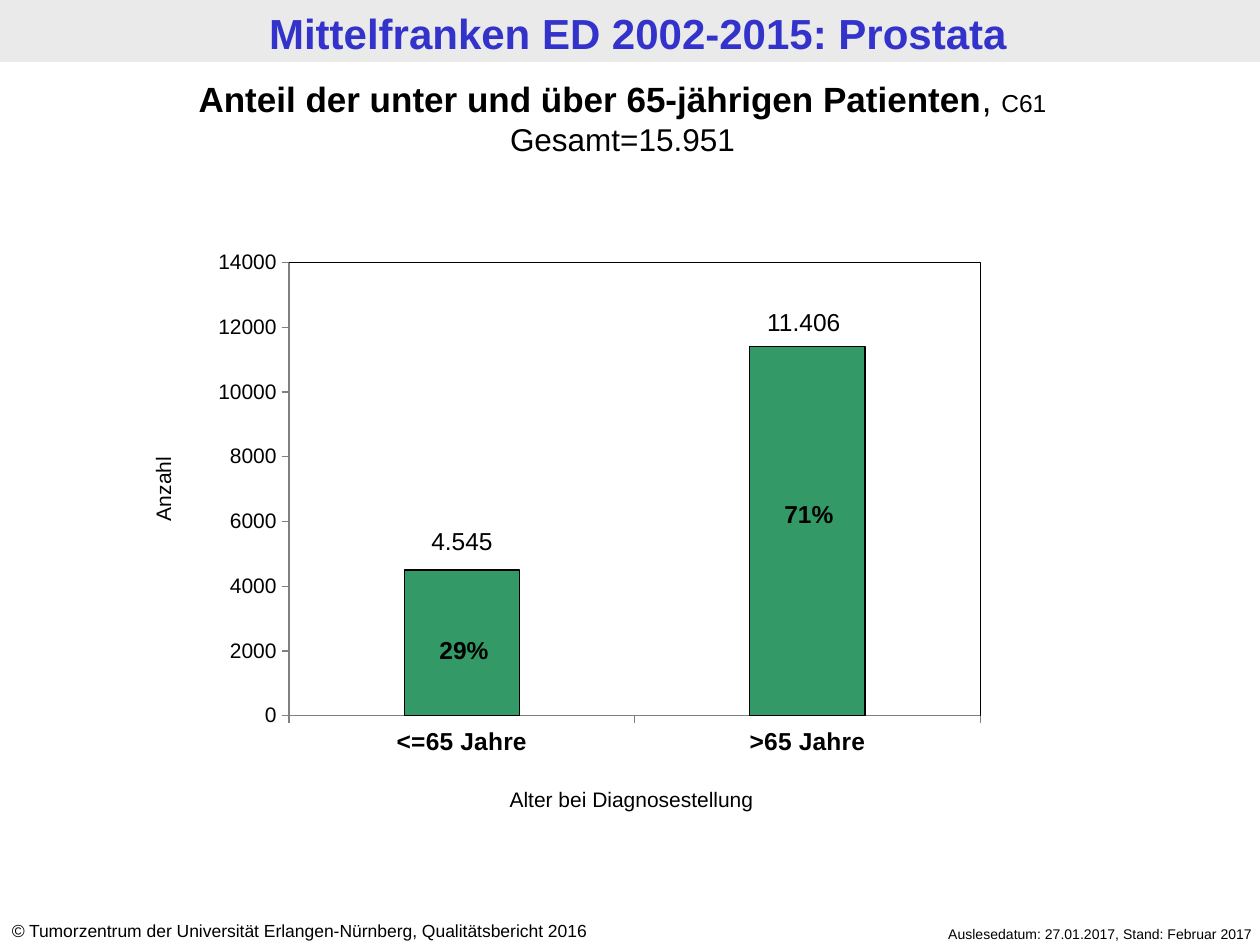
"""Build the slide on the age split of prostate patients."""
from dataclasses import dataclass

from lxml.etree import SubElement
from pptx import Presentation
from pptx.chart.data import CategoryChartData
from pptx.dml.color import RGBColor
from pptx.enum.chart import XL_CHART_TYPE, XL_TICK_MARK
from pptx.enum.shapes import MSO_SHAPE
from pptx.enum.text import MSO_ANCHOR, MSO_AUTO_SIZE, PP_ALIGN
from pptx.oxml import parse_xml
from pptx.oxml.ns import nsdecls, qn
from pptx.util import Pt


@dataclass(frozen=True)
class Theme:
    """Colours, fonts and type sizes."""
    text: RGBColor = RGBColor(0, 0, 0)
    title: RGBColor = RGBColor.from_string("3333CC")
    band: RGBColor = RGBColor.from_string("EAEAEA")
    bar: RGBColor = RGBColor.from_string("339966")
    axis: RGBColor = RGBColor.from_string("808080")
    font: str = "Arial"
    chart_font: str = "Calibri"
    title_size: int = 24
    heading_size: int = 20
    chart_size: int = 18
    label_size: int = 14
    axis_size: int = 12
    source_size: int = 10
    date_size: int = 8


class SlideBuilder:
    """Draw styled elements on one slide."""

    def __init__(self, page, theme):
        self.page = page
        self.theme = theme

    def style(self, font, size, bold=False, color=None):
        """Apply the theme typeface to a font."""
        font.name = self.theme.font
        font.size = Pt(size)
        font.bold = bold
        font.color.rgb = color or self.theme.text

    def band(self, width, height):
        """Put the header band behind everything else."""
        band = self.page.shapes.add_shape(MSO_SHAPE.RECTANGLE, 0, 0, Pt(width), Pt(height))
        band.shadow.inherit = False
        band.fill.solid()
        band.fill.fore_color.rgb = self.theme.band
        band.line.fill.background()
        self.page.shapes._spTree.insert(2, band._element)

    def title(self, words, left, top, width, height):
        """Fill and place the title placeholder."""
        box = self.page.shapes.title
        box.left, box.top, box.width, box.height = map(Pt, (left, top, width, height))
        frame = box.text_frame
        frame.text = words
        frame.auto_size = MSO_AUTO_SIZE.NONE
        frame.vertical_anchor = MSO_ANCHOR.TOP
        para = frame.paragraphs[0]
        para.alignment = PP_ALIGN.CENTER
        self.style(para.font, self.theme.title_size, True, self.theme.title)

    def text(self, words, left, top, width, height, size, bold=False,
             align=PP_ALIGN.CENTER, rotation=0):
        """Add a one-paragraph text box and return its frame."""
        box = self.page.shapes.add_textbox(Pt(left), Pt(top), Pt(width), Pt(height))
        box.rotation = rotation
        frame = box.text_frame
        frame.word_wrap = True
        frame.auto_size = MSO_AUTO_SIZE.SHAPE_TO_FIT_TEXT
        para = frame.paragraphs[0]
        para.alignment = align
        if words:
            para.add_run().text = words
        self.style(para.font, size, bold)
        return frame

    def span(self, para, words, size, bold=False, italic=False):
        """Append a separately styled run."""
        span = para.add_run()
        span.text = words
        self.style(span.font, size, bold)
        span.font.italic = italic

    def chart(self, counts, left, top, width, height, plot):
        """Add the stacked column chart."""
        data = CategoryChartData()
        data.categories = list(counts)
        data.add_series("Anzahl", list(counts.values()))
        chart = self.page.shapes.add_chart(
            XL_CHART_TYPE.COLUMN_STACKED, Pt(left), Pt(top), Pt(width), Pt(height), data).chart
        chart.has_legend = chart.has_title = False
        chart.font.name = self.theme.chart_font
        chart.font.size = Pt(self.theme.chart_size)
        chart.font.color.rgb = self.theme.text

        bars = chart.plots[0]
        bars.gap_width, bars.overlap, bars.vary_by_categories = 200, 100, False
        series = bars.series[0].format
        series.fill.solid()
        series.fill.fore_color.rgb = self.theme.bar
        series.line.color.rgb = self.theme.text
        series.line.width = Pt(0.75)

        values = chart.value_axis
        values.minimum_scale, values.maximum_scale, values.major_unit = 0, 14000, 2000
        self.axis(values, self.theme.axis_size)
        self.axis(chart.category_axis, self.theme.label_size, True)
        self.plot_area(chart, plot)

    def axis(self, axis, size, bold=False):
        """Style one chart axis."""
        axis.has_major_gridlines = False
        axis.major_tick_mark = XL_TICK_MARK.OUTSIDE
        axis.minor_tick_mark = XL_TICK_MARK.NONE
        axis.format.line.color.rgb = self.theme.axis
        self.style(axis.tick_labels.font, size, bold)

    def plot_area(self, chart, plot):
        """Fix the inner plot area and give it a frame."""
        area = chart._chartSpace.chart.plotArea
        for layout in area.findall(qn("c:layout")):
            area.remove(layout)
        layout = parse_xml(f"<c:layout {nsdecls('c')}><c:manualLayout/></c:layout>")
        settings = {"layoutTarget": "inner", "xMode": "edge", "yMode": "edge",
                    **dict(zip("xywh", plot))}
        for name, value in settings.items():
            SubElement(layout[0], qn(f"c:{name}"), val=str(value))
        area.insert(0, layout)
        area.append(parse_xml(
            f'<c:spPr {nsdecls("c", "a")}><a:noFill/><a:ln w="9525"><a:solidFill>'
            f'<a:srgbClr val="{self.theme.text}"/></a:solidFill></a:ln></c:spPr>'))


def main():
    """Compose and save the slide."""
    theme = Theme()
    deck = Presentation()
    deck.slide_width, deck.slide_height = Pt(720), Pt(540)
    builder = SlideBuilder(deck.slides.add_slide(deck.slide_layouts[5]), theme)

    builder.band(720, 35.4)
    builder.title("Mittelfranken ED 2002-2015: Prostata", 4.5, 0.7, 720, 35.3)

    source = builder.text("", -0.4, 522.3, 377, 19.4, theme.source_size, align=PP_ALIGN.LEFT)
    builder.span(source.paragraphs[0], "©", theme.source_size, italic=True)
    builder.span(source.paragraphs[0],
                 " Tumorzentrum der Universität Erlangen-Nürnberg, Qualitätsbericht 2016",
                 theme.source_size)
    builder.text("Auslesedatum: 27.01.2017, Stand: Februar 2017",
                 478.8, 525.3, 244, 17, theme.date_size, align=PP_ALIGN.RIGHT)

    builder.chart({"<=65 Jahre": 4500, ">65 Jahre": 11400},
                  108.4, 102.4, 502.6, 335.5, (0.113, 0.142, 0.786, 0.772))

    heading = builder.text("", 0, 41, 711.4, 53.3, theme.heading_size)
    first = heading.paragraphs[0]
    builder.span(first, "Anteil der unter und über 65-jährigen Patienten",
                 theme.heading_size, bold=True)
    builder.span(first, ", ", theme.heading_size)
    builder.span(first, "C61", theme.label_size)
    total = heading.add_paragraph()
    total.text = "Gesamt=15.951"
    total.alignment = PP_ALIGN.CENTER
    builder.style(total.font, theme.chart_size)

    for words, left, top, width, bold in (
            ("29%", 229.5, 359.3, 71.3, True),
            ("71%", 428, 281.5, 68.4, True),
            ("4.545", 227.3, 296.9, 73.4, False),
            ("11.406", 422.6, 172.1, 73.4, False)):
        builder.text(words, left, top, width, 24.5, theme.label_size, bold)

    builder.text("Alter bei Diagnosestellung", 241, 445.7, 239.8, 21.6, theme.axis_size)
    builder.text("Anzahl", -0.9, 268.6, 188, 21.6, theme.axis_size, rotation=270)
    deck.save("out.pptx")


if __name__ == "__main__":
    main()
